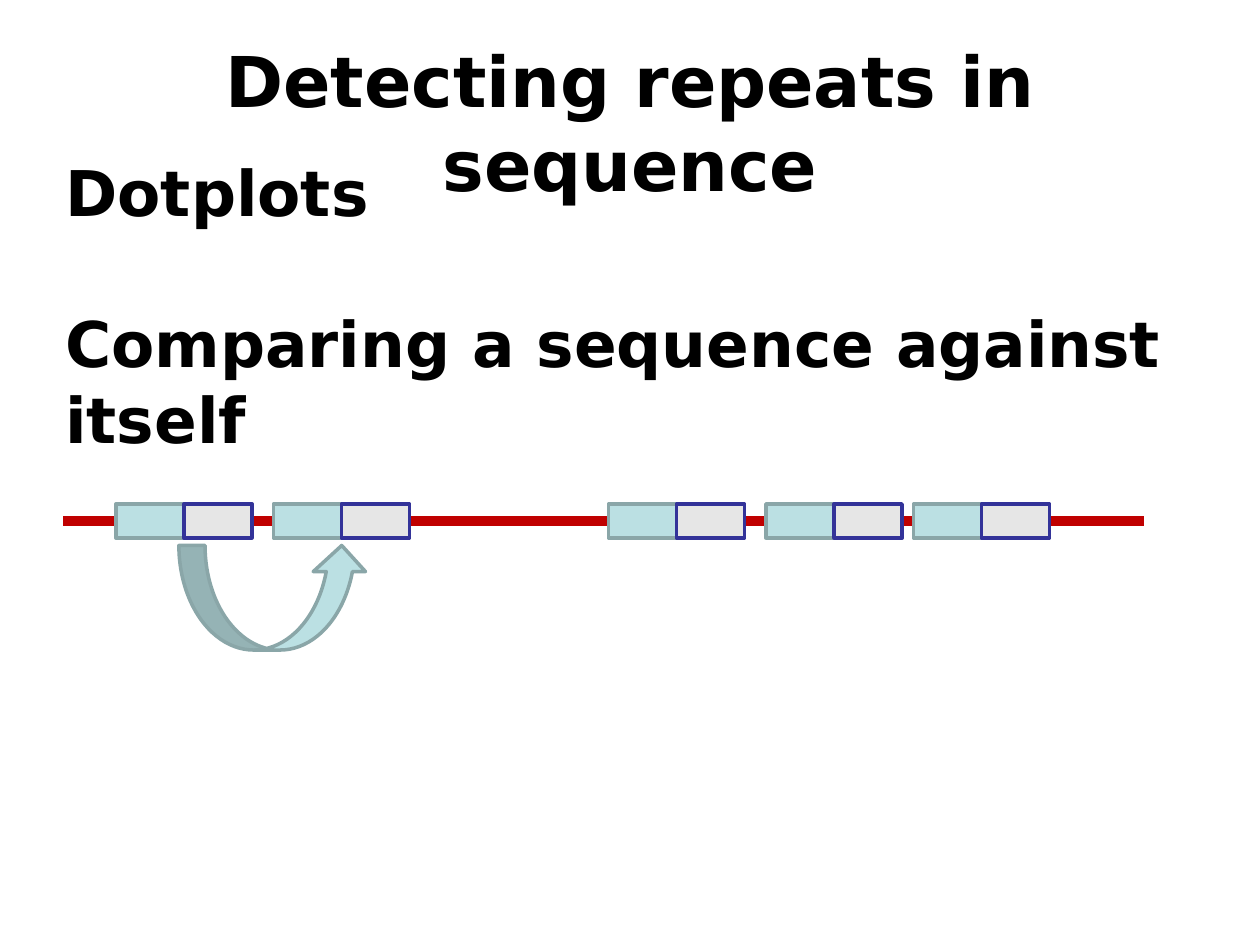
import pptx
import pptx.util
import pptx.dml.color
import pptx.enum.shapes
import pptx.enum.text
import pptx.oxml.ns
import lxml.etree

Inches = pptx.util.Inches
Pt = pptx.util.Pt
Kind = pptx.enum.shapes.MSO_SHAPE
Align = pptx.enum.text.PP_ALIGN

HUES = {
    "text": "000000",
    "strand": "C00000",
    "teal": "BBE0E3",
    "teal_edge": "8AA6A8",
    "gray": "E6E6E6",
    "blue_edge": "333399",
}
FONT = "DejaVu Sans"


def color(name):
    return pptx.dml.color.RGBColor.from_string(HUES[name])


def add_text(slide, box, lines, size, align=Align.LEFT, gap=0):
    frame = slide.shapes.add_textbox(*map(Inches, box)).text_frame
    frame.word_wrap = True
    frame.text = "\n".join(lines)
    for order, para in enumerate(frame.paragraphs):
        para.alignment = align
        para.space_before = Pt(gap if order else 0)
        font = para.runs[0].font
        font.name, font.size, font.bold = FONT, Pt(size), True
        font.color.rgb = color("text")


def add_part(shapes, kind, box, fill, edge):
    part = shapes.add_shape(kind, *map(Inches, box))
    part.shadow.inherit = False
    part.fill.solid()
    part.fill.fore_color.rgb = color(fill)
    part.line.color.rgb = color(edge)
    part.line.width = Pt(2)
    return part


def add_repeat(slide, box):
    left, top, width, height = box
    half = width / 2
    group = slide.shapes.add_group_shape()
    add_part(group.shapes, Kind.RECTANGLE, (left, top, half, height),
             "teal", "teal_edge")
    add_part(group.shapes, Kind.RECTANGLE, (left + half, top, half, height),
             "gray", "blue_edge")


def add_strand(slide, box):
    left, top, width, height = box
    mid = Inches(top + height / 2)
    strand = slide.shapes.add_connector(
        pptx.enum.shapes.MSO_CONNECTOR.STRAIGHT,
        Inches(left), mid, Inches(left + width), mid)
    strand.line.color.rgb = color("strand")
    strand.line.width = Pt(6)
    lxml.etree.SubElement(strand.element.spPr,
                          pptx.oxml.ns.qn("a:effectLst"))
    for shift in (0.42, 1.67, 4.33, 5.58, 6.75):
        add_repeat(slide, (left + shift, top, 1.08, height))


def add_arrow(slide, box):
    arrow = add_part(slide.shapes, Kind.CURVED_DOWN_ARROW, box,
                     "teal", "teal_edge")
    arrow.element.spPr.find(pptx.oxml.ns.qn("a:xfrm")).set("flipV", "1")


def main():
    deck = pptx.Presentation()
    deck.slide_width, deck.slide_height = Inches(10), Inches(7.5)
    slide = deck.slides.add_slide(deck.slide_layouts[6])
    add_text(slide, (0.42, 1.17, 9.08, 2.73),
             ["Dotplots", "Comparing a sequence against itself"], 36, gap=43)
    add_strand(slide, (0.5, 4, 8.58, 0.27))
    add_arrow(slide, (1.42, 4.33, 1.5, 0.83))
    add_text(slide, (0.12, 0.25, 9.76, 0.77),
             ["Detecting repeats in sequence"], 40, Align.CENTER)
    deck.save("out.pptx")


if __name__ == "__main__":
    main()
